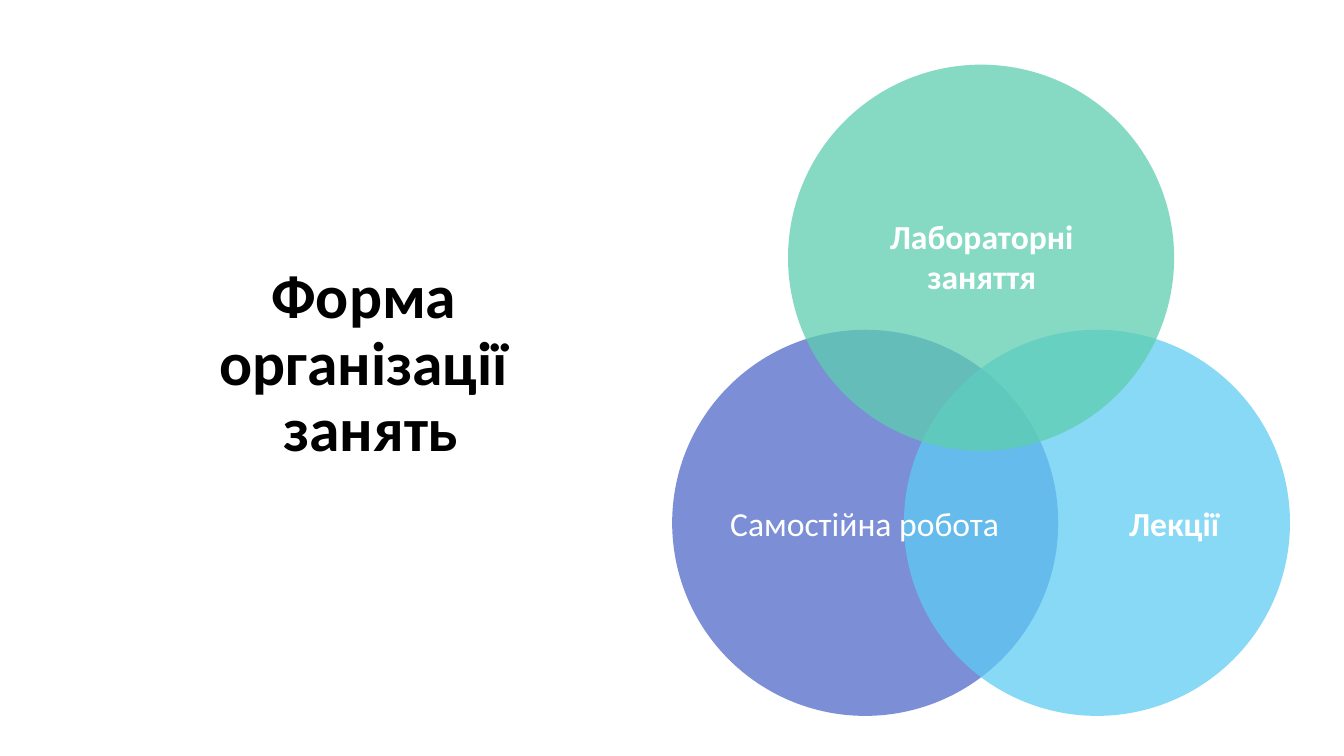
"""Build a slide with a three-circle Venn diagram of class formats."""
from dataclasses import dataclass

from lxml import etree
from pptx import Presentation
from pptx import util as u
from pptx.dml.color import RGBColor
from pptx.enum import shapes, text
from pptx.oxml.ns import qn

DIAMETER = 9.73
STEP = 2.92
VENN_LEFT, VENN_TOP, BASE_TOP = 16.94, 1.63, 8.31
LABEL_WIDTH = 7.42


@dataclass
class Circle:
    left: float
    top: float
    color: str


@dataclass
class Label:
    words: str
    left: float
    top: float
    height: float
    bold: bool = True


CIRCLES = [
    Circle(VENN_LEFT, BASE_TOP, "4E67C8"),
    Circle(VENN_LEFT + 2 * STEP, BASE_TOP, "5ECCF3"),
    Circle(VENN_LEFT + STEP, VENN_TOP, "5DCEAF"),
]
LABELS = [
    Label("Лабораторні заняття", 21.03, 5.31, 2.31),
    Label("Самостійна робота", 18.08, 12.55, 1.27, bold=False),
    Label("Лекції", 25.88, 12.55, 1.27),
]


def rgb(color: str) -> RGBColor:
    """Turn a hex string into a colour."""
    return RGBColor.from_string(color)


def write(tf, words: str, color: str, **font_format) -> None:
    """Fill a text frame with one centred, formatted paragraph."""
    tf.word_wrap = True
    p = tf.paragraphs[0]
    p.alignment = text.PP_ALIGN.CENTER
    for i, line in enumerate(words.split("\n")):
        if i:
            p.add_line_break()
        r = p.add_run()
        r.text = line
        for name, value in {"name": "Calibri", **font_format}.items():
            setattr(r.font, name, value)
        r.font.color.rgb = rgb(color)


def add_title(s) -> None:
    """Place and format the slide title."""
    sp = s.shapes.title
    box = {"left": 3.51, "top": 5.54, "width": 11.68, "height": 7.34}
    for name, value in box.items():
        setattr(sp, name, u.Cm(value))
    tf = sp.text_frame
    tf.vertical_anchor = text.MSO_ANCHOR.MIDDLE
    tf.auto_size = text.MSO_AUTO_SIZE.NONE
    write(tf, "Форма \nорганізації \nзанять", "000000", size=u.Pt(44), bold=True)
    tf.paragraphs[0].line_spacing = 0.9


def add_circle(s, circle: Circle) -> None:
    """Draw a translucent circle."""
    sp = s.shapes.add_shape(shapes.MSO_SHAPE.OVAL, u.Cm(circle.left), u.Cm(circle.top),
                            u.Cm(DIAMETER), u.Cm(DIAMETER))
    sp.shadow.inherit = False
    sp.line.fill.background()
    sp.fill.solid()
    sp.fill.fore_color.rgb = rgb(circle.color)
    fill = sp._element.spPr.find(qn("a:solidFill"))
    etree.SubElement(fill[0], qn("a:alpha"), val="74000")


def add_label(s, label: Label) -> None:
    """Write a white label over the diagram."""
    sp = s.shapes.add_textbox(u.Cm(label.left), u.Cm(label.top),
                              u.Cm(LABEL_WIDTH), u.Cm(label.height))
    write(sp.text_frame, label.words, "FFFFFF", size=u.Pt(24), bold=label.bold)
    sp.text_frame.auto_size = text.MSO_AUTO_SIZE.SHAPE_TO_FIT_TEXT


def main() -> None:
    """Build and save the presentation."""
    prs = Presentation()
    prs.slide_width, prs.slide_height = u.Cm(33.87), u.Cm(19.05)
    s = prs.slides.add_slide(prs.slide_layouts[5])
    add_title(s)
    for circle in CIRCLES:
        add_circle(s, circle)
    for label in LABELS:
        add_label(s, label)
    prs.save("out.pptx")


if __name__ == "__main__":
    main()
